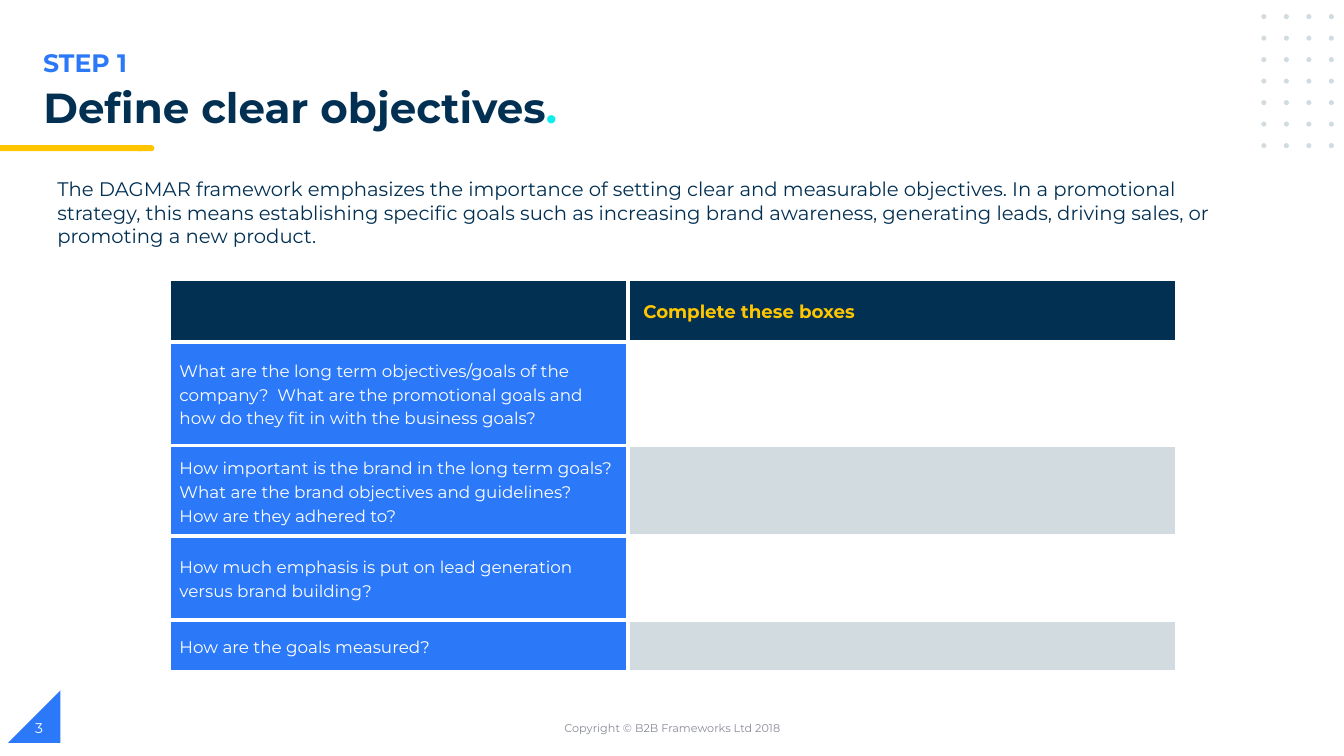
"""Build the DAGMAR step 1 worksheet slide."""
from dataclasses import dataclass

import pptx
import pptx.dml.color
import pptx.enum.shapes
import pptx.enum.text
import pptx.oxml
import pptx.oxml.ns
import pptx.util

Inches, Pt = pptx.util.Inches, pptx.util.Pt
RGB = pptx.dml.color.RGBColor.from_string
SHAPE = pptx.enum.shapes.MSO_SHAPE
ALIGN = pptx.enum.text.PP_ALIGN
ANCHOR = pptx.enum.text.MSO_ANCHOR

STEP = "STEP 1"
TITLE = ("Define clear objectives", ".")
INTRO = (
    "The DAGMAR framework emphasizes the importance of setting clear and measurable "
    "objectives. In a promotional strategy, this means establishing specific goals such as "
    "increasing brand awareness, generating leads, driving sales, or promoting a new product."
)
HEADER = "Complete these boxes"
QUESTIONS = [
    "What are the long term objectives/goals of the company?  What are the promotional "
    "goals and how do they fit in with the business goals?",
    "How important is the brand in the long term goals?  What are the brand objectives "
    "and guidelines?  How are they adhered to?",
    "How much emphasis is put on lead generation versus brand building?",
    "How are the goals measured?",
]
COPYRIGHT = "Copyright © B2B Frameworks Ltd 2018"
PAGE = "3"

COL_WIDTHS = (4.55, 5.44)
ROW_HEIGHTS = (0.62, 1.03, 0.9, 0.83, 0.52)
TABLE_AT = (1.68, 2.77)
DOT_COLS, DOT_ROWS, DOT_SIZE = 4, 7, 0.05
DOTS_FIRST, DOTS_LAST = (12.51, 0.14), (13.18, 1.42)


@dataclass(frozen=True)
class Theme:
    """Colours, font and type sizes of the slide."""
    navy: str = "023053"
    blue: str = "2B79F8"
    yellow: str = "FFC600"
    cyan: str = "0EECEC"
    pale: str = "D1DBE0"
    grey: str = "888C97"
    white: str = "FFFFFF"
    font: str = "Montserrat"
    title: int = 30
    step: int = 18
    intro: int = 14
    header: int = 13
    question: int = 12
    page: int = 10
    footer: int = 8
    border: int = 3


T = Theme()


def style(r, size, color, bold=False):
    """Format one run."""
    r.font.name, r.font.size, r.font.bold = T.font, Pt(size), bold
    r.font.color.rgb = RGB(color)


def add_shape(s, kind, box, color):
    """Add a plain filled shape."""
    sp = s.shapes.add_shape(kind, *map(Inches, box))
    sp.shadow.inherit = False
    sp.fill.solid()
    sp.fill.fore_color.rgb = RGB(color)
    sp.line.fill.background()
    return sp


def add_text(s, text, box, size, color, bold=False, align=ALIGN.LEFT, anchor=ANCHOR.TOP):
    """Add a wrapped text box with one run."""
    tf = s.shapes.add_textbox(*map(Inches, box)).text_frame
    tf.word_wrap, tf.vertical_anchor = True, anchor
    tf.text = text
    tf.paragraphs[0].alignment = align
    style(tf.paragraphs[0].runs[0], size, color, bold)


def add_title(s):
    """Fill the title placeholder, with its stop in the accent colour."""
    sp = s.shapes.title
    sp.left, sp.top, sp.width, sp.height = map(Inches, (0.33, 0.82, 7.76, 0.4))
    tf = sp.text_frame
    tf.auto_size = pptx.enum.text.MSO_AUTO_SIZE.NONE
    tf.word_wrap, tf.vertical_anchor = True, ANCHOR.TOP
    p = tf.paragraphs[0]
    p.alignment, p.line_spacing = ALIGN.LEFT, 0.9
    for text, color in zip(TITLE, (T.navy, T.cyan)):
        r = p.add_run()
        r.text = text
        style(r, T.title, color, True)


def add_dots(s):
    """Spread the dot grid evenly between its corners."""
    (x0, y0), (x1, y1) = DOTS_FIRST, DOTS_LAST
    dx, dy = (x1 - x0) / (DOT_COLS - 1), (y1 - y0) / (DOT_ROWS - 1)
    for i in range(DOT_COLS * DOT_ROWS):
        row, col = divmod(i, DOT_COLS)
        add_shape(s, SHAPE.OVAL, (x0 + col * dx, y0 + row * dy, DOT_SIZE, DOT_SIZE), T.pale)


def format_cell(cell, color):
    """Give a cell its borders, fill and margins."""
    tc_pr = cell._tc.get_or_add_tcPr()
    for side in ("lnL", "lnR", "lnT", "lnB"):
        tc_pr.append(pptx.oxml.parse_xml(
            f'<a:{side} {pptx.oxml.ns.nsdecls("a")} w="{Pt(T.border)}"><a:solidFill>'
            f'<a:srgbClr val="{T.white}"/></a:solidFill></a:{side}>'))
    cell.fill.solid()
    cell.fill.fore_color.rgb = RGB(color)
    cell.vertical_anchor = ANCHOR.MIDDLE
    cell.margin_left = cell.margin_right = Inches(0.1)
    cell.margin_top = cell.margin_bottom = 0


def add_worksheet(s):
    """Add the table of questions and boxes to complete."""
    size = (sum(COL_WIDTHS), sum(ROW_HEIGHTS))
    table = s.shapes.add_table(
        len(ROW_HEIGHTS), len(COL_WIDTHS), *map(Inches, TABLE_AT + size)).table
    for column, width in zip(table.columns, COL_WIDTHS):
        column.width = Inches(width)
    rows = [("", "\N{NO-BREAK SPACE}" + HEADER)] + [(q, "") for q in QUESTIONS]
    for i, (texts, height) in enumerate(zip(rows, ROW_HEIGHTS)):
        table.rows[i].height = Inches(height)
        box_color = T.white if i % 2 else T.pale
        colors = (T.blue, box_color) if i else (T.navy, T.navy)
        look = (T.question, T.white) if i else (T.header, T.yellow, True)
        for j, (text, color) in enumerate(zip(texts, colors)):
            cell = table.cell(i, j)
            format_cell(cell, color)
            if text:
                cell.text_frame.text = text
                p = cell.text_frame.paragraphs[0]
                p.line_spacing = 1.15
                style(p.runs[0], *look)


def main():
    """Assemble and save the slide."""
    prs = pptx.Presentation()
    prs.slide_width, prs.slide_height = Inches(13.33), Inches(7.5)
    s = prs.slides.add_slide(prs.slide_layouts[5])
    corner = add_shape(s, SHAPE.RIGHT_TRIANGLE, (0.08, 6.85, 0.52, 0.52), T.blue)
    corner.rotation = 270
    add_shape(s, SHAPE.FLOWCHART_TERMINATOR, (1.34, 1.44, 0.19, 0.06), T.yellow)
    add_shape(s, SHAPE.RECTANGLE, (0, 1.44, 1.41, 0.06), T.yellow)
    add_dots(s)
    add_text(s, STEP, (0.33, 0.42, 6.69, 0.4), T.step, T.blue, bold=True)
    add_title(s)
    add_text(s, INTRO, (0.47, 1.71, 11.74, 0.81), T.intro, T.navy)
    add_worksheet(s)
    add_text(s, COPYRIGHT, (4.42, 7.02, 4.5, 0.4), T.footer, T.grey,
             align=ALIGN.CENTER, anchor=ANCHOR.MIDDLE)
    add_text(s, PAGE, (0.25, 7.02, 3, 0.4), T.page, T.white, anchor=ANCHOR.MIDDLE)
    prs.save("out.pptx")


if __name__ == "__main__":
    main()
